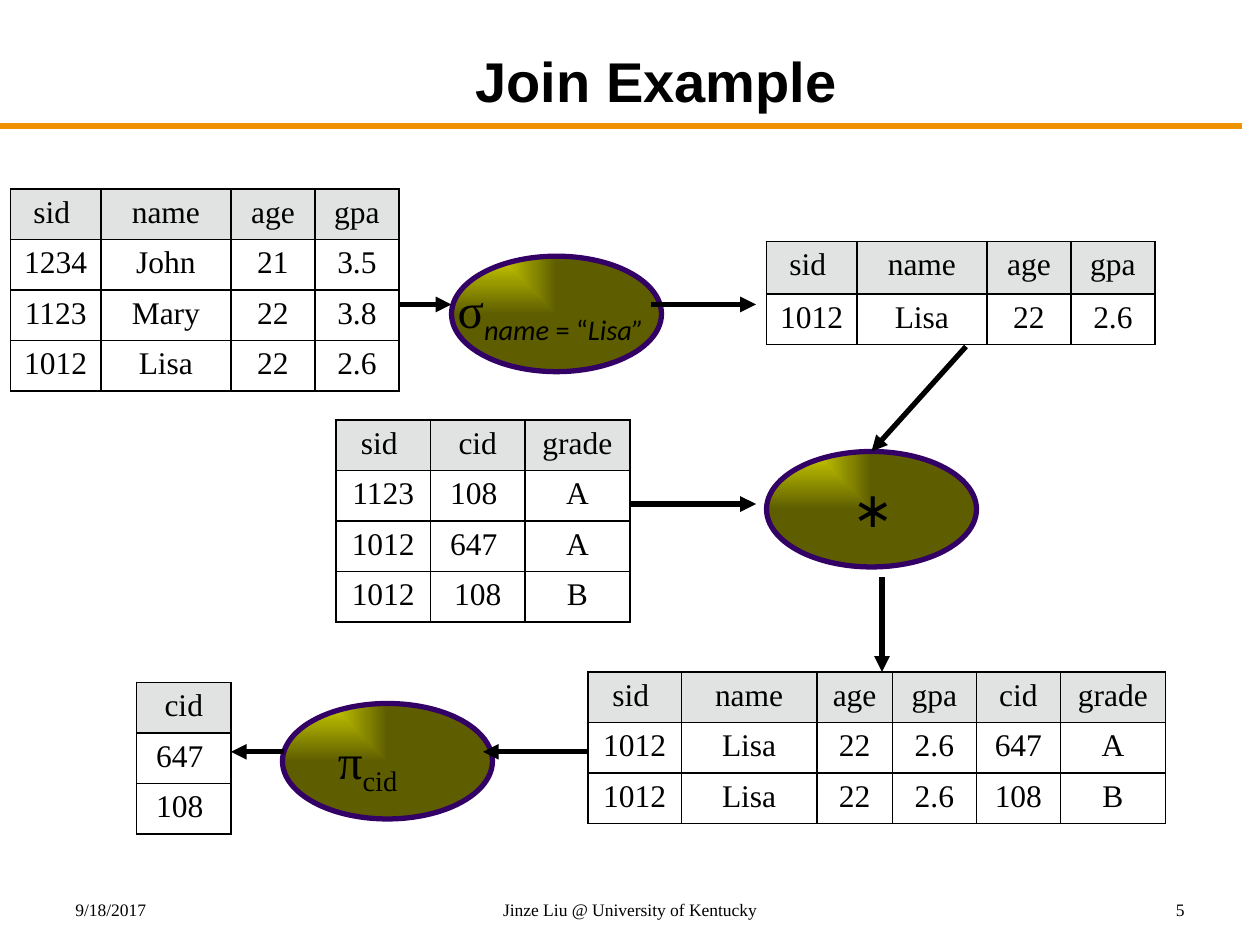
from lxml.etree import SubElement
from pptx import Presentation
from pptx.dml.color import RGBColor
from pptx.enum.shapes import MSO_CONNECTOR as Connector, MSO_SHAPE as Shape
from pptx.enum.text import MSO_ANCHOR as Anchor, PP_ALIGN as Align
from pptx.oxml import parse_xml
from pptx.oxml.ns import nsdecls, qn
from pptx.util import Inches, Pt

COLORS = {"ink": "000000", "rule": "EF9100", "header": "E1E3E3",
          "outline": "330066", "glow": "CCCC00", "olive": "5E5E00"}
SERIF = "Times New Roman"
UNITS_PER_INCH = 12
ROW = 4.8
OVAL_SIZE = (20, 11)

TITLE = ("Join Example", (13, 3, 99, 8.4))
FOOTERS = [
    ("9/18/2017", (6, 85, 28, 3), Align.LEFT),
    ("Jinze Liu @ University of Kentucky", (41, 85, 38, 3), Align.CENTER),
    ("5", (86, 85, 28, 3), Align.RIGHT),
]
STUDENT_COLUMNS = [8.6, 12.4, 8, 8]
TABLES = [
    ((1, 18), STUDENT_COLUMNS, ROW, [
        ["sid ", "name", "age", "gpa"],
        ["1234", "John", "21", "3.5"],
        ["1123", "Mary", "22", "3.8"],
        ["1012", "Lisa", "22", "2.6"]]),
    ((73, 23), STUDENT_COLUMNS, 5, [
        ["sid ", "name", "age", "gpa"],
        ["1012", "Lisa", "22", "2.6"]]),
    ((32, 40), [9, 9, 10], ROW, [
        ["sid ", "cid", "grade"],
        ["1123", "108 ", "A"],
        ["1012", "647 ", "A"],
        ["1012", "108", "B"]]),
    ((56, 64), [8.9, 12.9, 7.2, 8, 8, 10], ROW, [
        ["sid ", "name", "age", "gpa", "cid", "grade"],
        ["1012", "Lisa", "22", "2.6", "647", "A"],
        ["1012", "Lisa", "22", "2.6", "108", "B"]]),
    ((13, 65), [9], ROW, [["cid"], ["647 "], ["108 "]]),
]
OPERATORS = {
    "select": ((43, 24.4), (42.4, 26, 23.6, 6.8), [
        ("σ", SERIF, False, False), ("name", "Calibri", True, True),
        (" = “", "Calibri", False, True), ("Lisa”", "Calibri", True, True)]),
    "join": ((73, 43), (80, 45, 4.8, 6.8), [("∗", "Lato", False, False)]),
    "project": ((26.9, 67), (31, 69, 8.6, 6.8), [
        ("π", SERIF, False, False), ("cid", SERIF, False, True)]),
}
ARROWS = [
    ((38, 29), (43, 29), None),
    ((62, 29), (72, 29), None),
    ((60, 48), (72, 48), None),
    ((92, 33), (83, 43), "join"),
    ((84, 55), (84, 64), None),
    ((27, 71.6), (22, 71.6), None),
    ((56, 71.6), (46, 71.6), None),
]


def grid(*values):
    return [Inches(value / UNITS_PER_INCH) for value in values]


def color(name):
    return RGBColor.from_string(COLORS[name])


def style(span, size, font=SERIF, bold=False, italic=False):
    span.font.size = Pt(size)
    span.font.name = font
    span.font.bold = bold
    span.font.italic = italic
    span.font.color.rgb = color("ink")


def add_text(page, text, place, size, align, font=SERIF, bold=False, anchor=Anchor.TOP):
    frame = page.shapes.add_textbox(*grid(*place)).text_frame
    frame.word_wrap = True
    frame.vertical_anchor = anchor
    frame.text = text
    para = frame.paragraphs[0]
    para.alignment = align
    style(para.runs[0], size, font, bold)


def add_line(page, start, end, line_color):
    line = page.shapes.add_connector(Connector.STRAIGHT, *grid(*start, *end))
    line.line.color.rgb = color(line_color)
    line.line.width = Pt(3)
    SubElement(line._element.spPr, qn("a:effectLst"))
    return line


def add_arrow(page, start, end, target):
    arrow = add_line(page, start, end, "ink")
    SubElement(arrow.line._get_or_add_ln(), qn("a:tailEnd"), type="triangle")
    if target is not None:
        arrow.end_connect(target, 0)


def add_borders(cell):
    props = cell._tc.get_or_add_tcPr()
    for index, side in enumerate(("lnL", "lnR", "lnT", "lnB")):
        props.insert(index, parse_xml(
            f'<a:{side} {nsdecls("a")} w="12700"><a:solidFill>'
            f'<a:srgbClr val="{COLORS["ink"]}"/></a:solidFill></a:{side}>'))


def add_relation(page, corner, widths, header_height, rows):
    heights = [header_height] + [ROW] * (len(rows) - 1)
    size = (sum(widths), sum(heights))
    table = page.shapes.add_table(len(rows), len(widths), *grid(*corner, *size)).table
    table.first_row = table.horz_banding = False
    for column, width in zip(table.columns, grid(*widths)):
        column.width = width
    for row, height, values in zip(table.rows, grid(*heights), rows):
        row.height = height
        for cell, value in zip(row.cells, values):
            cell.text = value
            para = cell.text_frame.paragraphs[0]
            para.alignment = Align.CENTER
            style(para.runs[0], 18)
            if values is rows[0]:
                cell.fill.solid()
                cell.fill.fore_color.rgb = color("header")
            else:
                cell.fill.background()
            add_borders(cell)


def add_operator(page, corner, label_place, spans):
    oval = page.shapes.add_shape(Shape.OVAL, *grid(*corner, *OVAL_SIZE))
    oval.shadow.inherit = False
    oval.line.color.rgb = color("outline")
    oval.line.width = Pt(3)
    gradient = parse_xml(
        f'<a:gradFill {nsdecls("a")} rotWithShape="1"><a:gsLst>'
        f'<a:gs pos="0"><a:srgbClr val="{COLORS["glow"]}"/></a:gs>'
        f'<a:gs pos="100000"><a:srgbClr val="{COLORS["olive"]}"/></a:gs></a:gsLst>'
        '<a:path path="rect"><a:fillToRect r="100000" b="100000"/></a:path></a:gradFill>')
    oval._element.spPr.find(qn("a:prstGeom")).addnext(gradient)

    frame = page.shapes.add_textbox(*grid(*label_place)).text_frame
    frame.word_wrap = False
    for text, font, italic, subscript in spans:
        span = frame.paragraphs[0].add_run()
        span.text = text
        style(span, 28, font, italic=italic)
        if subscript:
            span.font._element.set("baseline", "-25000")
    return oval


def main():
    deck = Presentation()
    deck.slide_width, deck.slide_height = Inches(10), Inches(7.5)
    page = deck.slides.add_slide(deck.slide_layouts[6])

    add_line(page, (0, 12), (118.3, 12), "rule")
    add_text(page, *TITLE, 32, Align.CENTER, "Arial", True, Anchor.BOTTOM)
    for text, place, align in FOOTERS:
        add_text(page, text, place, 10, align)
    for relation in TABLES:
        add_relation(page, *relation)
    ovals = {name: add_operator(page, *parts) for name, parts in OPERATORS.items()}
    for start, end, target in ARROWS:
        add_arrow(page, start, end, ovals.get(target))

    deck.save("out.pptx")


if __name__ == "__main__":
    main()
